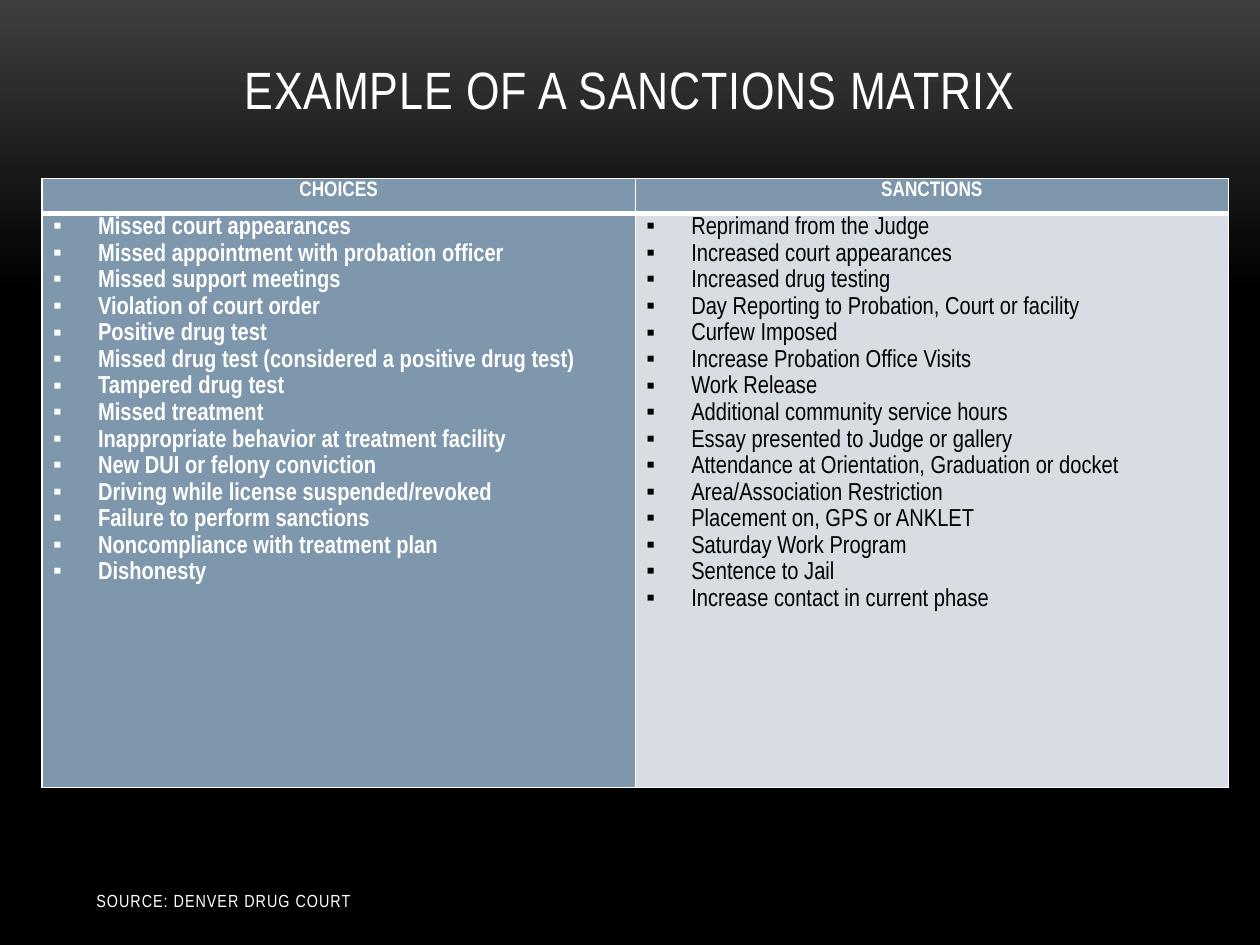
import copy
import pptx
import pptx.dml.color
import pptx.enum.text
import pptx.oxml
import pptx.oxml.ns
import pptx.util
from pptx.util import Pt

TITLE = "EXAMPLE OF A SANCTIONS MATRIX"
SOURCE = "SOURCE: DENVER DRUG COURT"
MATRIX = {
    "CHOICES": [
        "Missed court appearances",
        "Missed appointment with probation officer",
        "Missed support meetings",
        "Violation of court order",
        "Positive drug test",
        "Missed drug test (considered a positive drug test)",
        "Tampered drug test",
        "Missed treatment",
        "Inappropriate behavior at treatment facility",
        "New DUI or felony conviction",
        "Driving while license suspended/revoked",
        "Failure to perform sanctions",
        "Noncompliance with treatment plan",
        "Dishonesty",
    ],
    "SANCTIONS": [
        "Reprimand from the Judge",
        "Increased court appearances",
        "Increased drug testing",
        "Day Reporting to Probation, Court or facility",
        "Curfew Imposed",
        "Increase Probation Office Visits",
        "Work Release",
        "Additional community service hours",
        "Essay presented to Judge or gallery",
        "Attendance at Orientation, Graduation or docket",
        "Area/Association Restriction",
        "Placement on, GPS or ANKLET",
        "Saturday Work Program",
        "Sentence to Jail",
        "Increase contact in current phase",
    ],
}
THEME = {
    "font": "Arial Narrow",
    "white": "FFFFFF", "black": "000000", "glow": "3F3F3F",
    "blue": "7E97AD", "pale": "D8DDE3",
    "title": 30, "body": 14, "header": 12, "source": 10,
}
BODY_STYLES = [("blue", "white", True), ("pale", "black", False)]
TABLE_LEFT, TABLE_TOP, COLUMN_WIDTH = 24, 102, 339
ROW_HEIGHTS = [20, 328]
THIN, THICK = 1, 3
ANCHOR = pptx.enum.text.MSO_ANCHOR
CENTER = pptx.enum.text.PP_ALIGN.CENTER


def rgb(name):
    return pptx.dml.color.RGBColor.from_string(THEME[name])


def add_run(p, text, size, color="white", bold=False, spacing=0):
    r = p.add_run()
    r.text = text
    r.font.name = THEME["font"]
    r.font.size = Pt(THEME[size])
    r.font.bold = bold
    r.font.color.rgb = rgb(color)
    if spacing:
        r.font._element.set("spc", str(round(spacing * 100)))


def add_label(s, box, text, size, anchor, align=None, spacing=0):
    sp = s.shapes.add_textbox(*map(Pt, box))
    tf = sp.text_frame
    tf.word_wrap = True
    tf.vertical_anchor = anchor
    p = tf.paragraphs[0]
    p.alignment = align
    add_run(p, text, size, spacing=spacing)


def add_xml(parent, xml, index=None):
    ns = pptx.oxml.ns.nsdecls("a")
    element = pptx.oxml.parse_xml(xml.replace("/>", f" {ns}/>", 1) if xml.endswith("/>")
                                  else xml.replace(">", f" {ns}>", 1))
    parent.insert(len(parent) if index is None else index, element)


def style_cell(cell, fill, top, bottom):
    cell.margin_left = cell.margin_right = Pt(5)
    cell.margin_top = cell.margin_bottom = 0
    cell.fill.solid()
    cell.fill.fore_color.rgb = rgb(fill)
    widths = {"lnL": THIN, "lnR": THIN, "lnT": top, "lnB": bottom}
    for i, (side, width) in enumerate(widths.items()):
        add_xml(cell._tc.get_or_add_tcPr(),
                f'<a:{side} w="{Pt(width)}"><a:solidFill>'
                f'<a:srgbClr val="{THEME["white"]}"/></a:solidFill></a:{side}>', i)


def add_bullet(p):
    pPr = p._p.get_or_add_pPr()
    pPr.set("marL", str(Pt(27)))
    pPr.set("indent", str(-Pt(27)))
    add_xml(pPr, '<a:buSzPct val="75000"/>')
    add_xml(pPr, '<a:buChar char="▪"/>')
    add_xml(pPr, f'<a:tabLst><a:tab pos="{Pt(18)}" algn="l"/></a:tabLst>')


def fill_background(s):
    fill = s.background.fill
    fill.gradient()
    fill.gradient_angle = 270
    for stop, color, position in zip(fill.gradient_stops, ("glow", "black"), (0, 0.31)):
        stop.color.rgb = rgb(color)
        stop.position = position
    last = s._element.findall(".//" + pptx.oxml.ns.qn("a:gs"))[-1]
    end = copy.deepcopy(last)
    end.set("pos", "100000")
    last.addnext(end)


def add_matrix(s):
    table = s.shapes.add_table(2, len(MATRIX), Pt(TABLE_LEFT), Pt(TABLE_TOP),
                               Pt(COLUMN_WIDTH * len(MATRIX)), Pt(sum(ROW_HEIGHTS))).table
    table.horz_banding = False
    for row, height in zip(table.rows, ROW_HEIGHTS):
        row.height = Pt(height)
    for col, (heading, items) in enumerate(MATRIX.items()):
        table.columns[col].width = Pt(COLUMN_WIDTH)
        header, body = table.cell(0, col), table.cell(1, col)
        fill, color, bold = BODY_STYLES[col]
        style_cell(header, "blue", THIN, THICK)
        style_cell(body, fill, THICK, THIN)
        p = header.text_frame.paragraphs[0]
        p.alignment = CENTER
        p.line_spacing = 1.15
        p.space_after = Pt(3)
        add_run(p, heading, "header", bold=True)
        tf = body.text_frame
        for i, item in enumerate(items):
            p = tf.add_paragraph() if i else tf.paragraphs[0]
            p.line_spacing = 1.15
            add_bullet(p)
            add_run(p, item, "body", color, bold)


def main():
    prs = pptx.Presentation()
    prs.slide_width, prs.slide_height = Pt(720), Pt(540)
    s = prs.slides.add_slide(prs.slide_layouts[6])
    fill_background(s)
    add_label(s, (48, 21.6, 624, 50.4), TITLE, "title", ANCHOR.BOTTOM, CENTER, 0.5)
    add_label(s, (48, 500.4, 228, 28.8), SOURCE, "source", ANCHOR.MIDDLE, spacing=0.6)
    add_matrix(s)
    prs.save("out.pptx")


if __name__ == "__main__":
    main()
